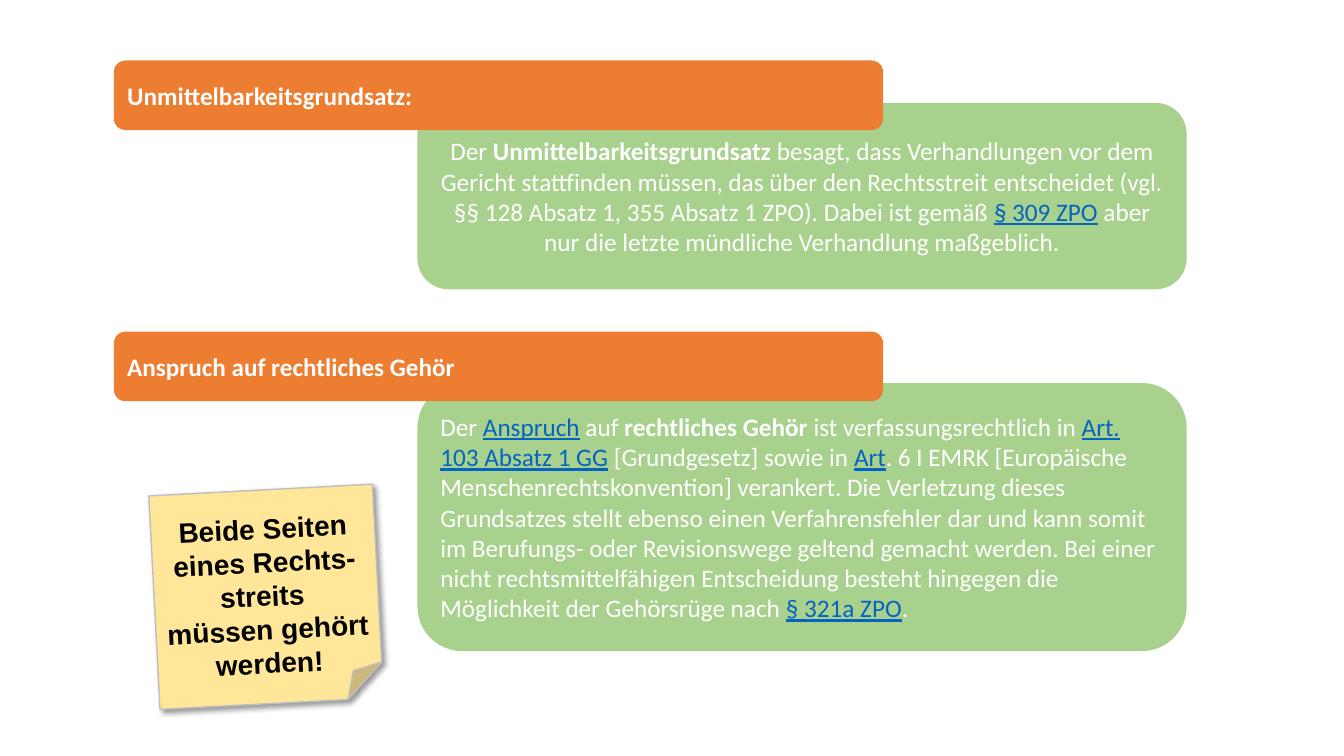
"""Build the slide on two principles of civil procedure."""
from dataclasses import dataclass

from lxml import etree
from pptx import Presentation
from pptx.dml.color import RGBColor
from pptx.enum import shapes, text
from pptx.oxml import ns
from pptx.util import Emu, Pt

PX = 9144
WHITE = RGBColor(0xFF, 0xFF, 0xFF)
BLACK = RGBColor(0x00, 0x00, 0x00)
BLUE = RGBColor(0x05, 0x63, 0xC1)
GREEN = RGBColor(0xA9, 0xD1, 0x8E)
ORANGE = RGBColor(0xED, 0x7D, 0x31)
YELLOW = RGBColor(0xFF, 0xE6, 0x99)
GREY = RGBColor(0xBF, 0xBF, 0xBF)

LEFT = text.PP_ALIGN.LEFT
MID = text.PP_ALIGN.CENTER
ROUND = shapes.MSO_SHAPE.ROUNDED_RECTANGLE
FOLD = shapes.MSO_SHAPE.FOLDED_CORNER

BODY = {"name": "Calibri", "size": Pt(18), "bold": False, "underline": False}
HEAD = BODY | {"bold": True}
LINK = BODY | {"underline": True}
MEMO = {"name": "Arial", "size": Pt(20), "bold": True}


@dataclass(frozen=True)
class Run:
    """A piece of text with its format."""
    words: str
    form: dict
    color: RGBColor = WHITE


@dataclass(frozen=True)
class Box:
    """A filled shape with its place in px and its paragraphs."""
    left: int
    top: int
    width: int
    height: int
    fill: RGBColor
    paras: list[list[Run]]
    align: text.PP_ALIGN = LEFT
    kind: shapes.MSO_SHAPE = ROUND


def plain(words: str) -> Run:
    """Return body text."""
    return Run(words, BODY)


def bold(words: str) -> Run:
    """Return bold text."""
    return Run(words, HEAD)


def link(words: str) -> Run:
    """Return blue underlined text."""
    return Run(words, LINK, BLUE)


def card(top: int, height: int, runs: list[Run], align: text.PP_ALIGN) -> Box:
    """Return a green card of explanation."""
    return Box(414, top, 763, height, GREEN, [runs], align)


def title(top: int, words: str) -> Box:
    """Return an orange heading bar."""
    return Box(113, top, 763, 69, ORANGE, [[bold(words)]])


HEARING = [
    plain("Der "), link("Anspruch"), plain(" auf "), bold("rechtliches Gehör"),
    plain(" ist verfassungsrechtlich in "), link("Art. 103 Absatz 1 GG"),
    plain(" [Grundgesetz] sowie in "), link("Art"),
    plain(". 6 I EMRK [Europäische Menschenrechtskonvention] verankert. "
          "Die Verletzung dieses Grundsatzes stellt ebenso einen "
          "Verfahrensfehler dar und kann somit im Berufungs- oder "
          "Revisionswege geltend gemacht werden. Bei einer nicht "
          "rechtsmittelfähigen Entscheidung besteht hingegen die "
          "Möglichkeit der Gehörsrüge nach "),
    link("§ 321a ZPO"), plain("."),
]
DIRECT = [
    plain("Der "), bold("Unmittelbarkeitsgrundsatz"),
    plain(" besagt, dass Verhandlungen vor dem Gericht stattfinden müssen, "
          "das über den Rechtsstreit entscheidet (vgl. §§ 128 Absatz 1, "
          "355 Absatz 1 ZPO). Dabei ist gemäß "),
    link("§ 309 ZPO"),
    plain(" aber nur die letzte mündliche Verhandlung maßgeblich."),
]
LINES = ["Beide Seiten eines Rechts-", "streits ", "müssen gehört werden!"]

BOXES = [
    card(380, 266, HEARING, LEFT),
    card(102, 185, DIRECT, MID),
    title(60, "Unmittelbarkeitsgrundsatz:"),
    title(329, "Anspruch auf rechtliches Gehör"),
]
NOTE = Box(153, 486, 222, 212, YELLOW,
           [[Run(line, MEMO, BLACK)] for line in LINES], MID, FOLD)


def draw(slide, box: Box):
    """Draw a box with its text and return the shape."""
    place = (Emu(n * PX) for n in (box.left, box.top, box.width, box.height))
    shape = slide.shapes.add_shape(box.kind, *place)
    shape.shadow.inherit = False
    shape.fill.solid()
    shape.fill.fore_color.rgb = box.fill
    shape.line.fill.background()
    frame = shape.text_frame
    frame.word_wrap = True
    frame.vertical_anchor = text.MSO_ANCHOR.MIDDLE
    for i, runs in enumerate(box.paras):
        para = frame.add_paragraph() if i else frame.paragraphs[0]
        para.alignment = box.align
        for item in runs:
            run = para.add_run()
            run.text = item.words
            for key, value in item.form.items():
                setattr(run.font, key, value)
            run.font.color.rgb = item.color
    return shape


def shade(shape) -> None:
    """Give a shape a soft shadow to the lower right."""
    effects = shape.element.spPr.find(ns.qn("a:effectLst"))
    outer = etree.SubElement(
        effects, ns.qn("a:outerShdw"), blurRad=str(Pt(4)), dist=str(Pt(3)),
        dir="2700000", algn="tl", rotWithShape="0")
    color = etree.SubElement(outer, ns.qn("a:srgbClr"), val=str(BLACK))
    etree.SubElement(color, ns.qn("a:alpha"), val="40000")


def main() -> None:
    """Build and save the slide."""
    deck = Presentation()
    deck.slide_width, deck.slide_height = Emu(1333 * PX), Emu(750 * PX)
    slide = deck.slides.add_slide(deck.slide_layouts[6])
    for box in BOXES:
        draw(slide, box)
    note = draw(slide, NOTE)
    note.rotation = 357
    note.line.color.rgb = GREY
    note.line.width = Pt(1)
    note.text_frame.margin_top = Emu(37 * PX)
    shade(note)
    deck.save("out.pptx")


if __name__ == "__main__":
    main()
